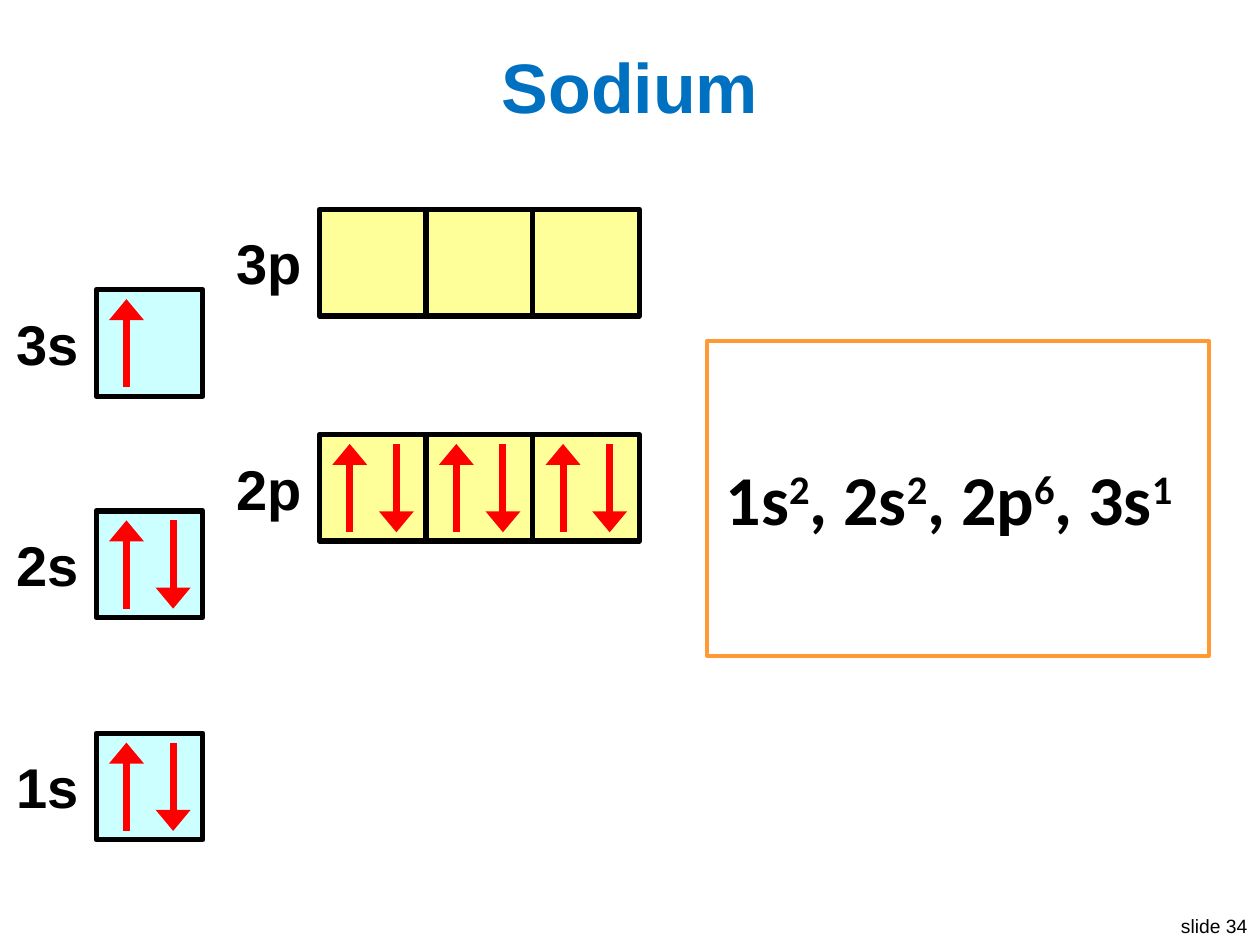
from lxml.etree import SubElement
from pptx import Presentation
from pptx.dml.color import RGBColor
from pptx.enum.shapes import MSO_CONNECTOR, MSO_SHAPE
from pptx.enum.text import MSO_ANCHOR, MSO_AUTO_SIZE, PP_ALIGN
from pptx.oxml.ns import qn
from pptx.util import Cm, Pt

COLORS = {
    "title": "0070C0",
    "text": "000000",
    "s": "CCFFFF",
    "p": "FFFF99",
    "electron": "FF0000",
    "frame": "FF9933",
}
BOX = 2.15  # side of one orbital box, in cm

# Subshell name, left, top, number of boxes, number of electrons
SUBSHELLS = [
    ("3s", 1.94, 5.84, 1, 1),
    ("2s", 1.94, 10.3, 1, 2),
    ("1s", 1.94, 14.78, 1, 2),
    ("2p", 6.44, 8.76, 3, 6),
    ("3p", 6.44, 4.22, 3, 0),
]
CONFIGURATION = [("1s", "2"), (", 2s", "2"), (", 2p", "6"), (", 3s", "1")]


class OrbitalSlide:
    def __init__(self, slide):
        self.slide = slide

    def style(self, paragraph, size, color="text", bold=True, font="Arial"):
        paragraph.font.name = font
        paragraph.font.size = Pt(size)
        paragraph.font.bold = bold
        paragraph.font.color.rgb = RGBColor.from_string(COLORS[color])

    def title(self, text):
        shape = self.slide.shapes.title
        shape.left, shape.top, shape.width, shape.height = Cm(0.51), Cm(0.7), Cm(24.38), Cm(2.03)
        shape.text_frame.text = text
        shape.text_frame.vertical_anchor = MSO_ANCHOR.MIDDLE
        paragraph = shape.text_frame.paragraphs[0]
        paragraph.alignment = PP_ALIGN.CENTER
        self.style(paragraph, 40, "title")

    def text(self, text, left, top, width, height, size, align=PP_ALIGN.RIGHT, **style):
        shape = self.slide.shapes.add_textbox(Cm(left), Cm(top), Cm(width), Cm(height))
        shape.text_frame.word_wrap = False
        shape.text_frame.auto_size = MSO_AUTO_SIZE.SHAPE_TO_FIT_TEXT
        paragraph = shape.text_frame.paragraphs[0]
        paragraph.alignment = align
        self.style(paragraph, size, **style)
        if text:
            paragraph.add_run().text = text
        return paragraph

    def rectangle(self, left, top, width, height, line, weight, fill=None):
        shape = self.slide.shapes.add_shape(
            MSO_SHAPE.RECTANGLE, Cm(left), Cm(top), Cm(width), Cm(height))
        shape.shadow.inherit = False
        if fill:
            shape.fill.solid()
            shape.fill.fore_color.rgb = RGBColor.from_string(COLORS[fill])
        else:
            shape.fill.background()
        shape.line.color.rgb = RGBColor.from_string(COLORS[line])
        shape.line.width = Pt(weight)

    def arrow(self, x, start, end):
        connector = self.slide.shapes.add_connector(
            MSO_CONNECTOR.STRAIGHT, Cm(x), Cm(start), Cm(x), Cm(end))
        connector.line.color.rgb = RGBColor.from_string(COLORS["electron"])
        connector.line.width = Pt(4)
        properties = connector.element.spPr
        SubElement(properties.find(qn("a:ln")), qn("a:tailEnd"), type="triangle", w="lg")
        SubElement(properties, qn("a:effectLst"))

    def subshell(self, name, left, top, boxes, electrons):
        width = 1.86 if name[-1] == "p" else 1.8  # the letter p is wider than s
        self.text(name, left - 0.1 - width, top + 0.27, width, 1.63, 32)
        for index in range(boxes):
            self.rectangle(left + index * BOX, top, BOX, BOX, "text", 3, fill=name[-1])
        high, low = top + 0.19, top + 1.97
        for electron in range(electrons):
            index, spin_down = divmod(electron, 2)
            x = left + index * BOX + 0.61
            if spin_down:
                self.arrow(x + 0.94, high, low)
            else:
                self.arrow(x, low, high)

    def configuration(self, terms):
        self.rectangle(14.26, 6.87, 10.11, 6.35, "frame", 2.25)
        paragraph = self.text("", 14.38, 9.06, 9.88, 1.96, 40, PP_ALIGN.LEFT, font="Calibri")
        for subshell, count in terms:
            paragraph.add_run().text = subshell
            superscript = paragraph.add_run()
            superscript.text = count
            superscript.font._element.set("baseline", "30000")


def main():
    presentation = Presentation()
    presentation.slide_width, presentation.slide_height = Cm(25.4), Cm(19.05)
    page = OrbitalSlide(presentation.slides.add_slide(presentation.slide_layouts[5]))

    # Title and slide number
    page.title("Sodium")
    page.text("slide 34", 23.5, 18.31, 1.9, 0.74, 11, bold=False)

    # Electron configuration
    page.configuration(CONFIGURATION)

    # Orbital diagram
    for subshell in SUBSHELLS:
        page.subshell(*subshell)

    presentation.save("out.pptx")


if __name__ == "__main__":
    main()
